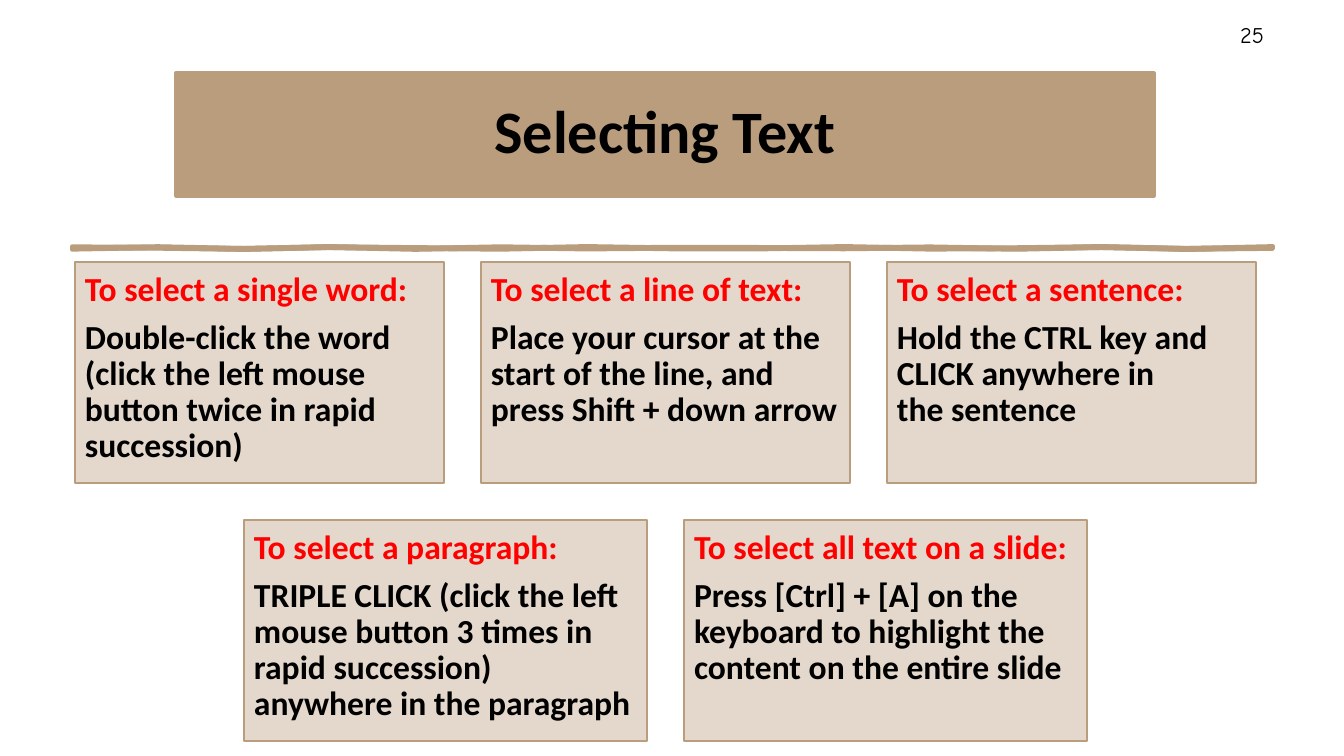
import math

import pptx
import pptx.dml.color
import pptx.enum.shapes
import pptx.enum.text
import pptx.util

# Content
NBSP = chr(160)  # keeps two words on one line
PAGE_NUMBER = "25"
TITLE = "Selecting Text"
CARD_ROWS = [
    {"card_width": 369, "top": 262, "cards": [
        ("To select a single word:",
         "Double-click the word (click the left mouse button twice in rapid succession)"),
        ("To select a line of text:",
         "Place your cursor at the start of the line, and press Shift + down arrow"),
        ("To select a sentence:",
         f"Hold the CTRL key and CLICK anywhere in the{NBSP}sentence"),
    ]},
    {"card_width": 403, "top": 520, "cards": [
        ("To select a paragraph:",
         "TRIPLE CLICK (click the left mouse button 3 times in rapid succession) "
         "anywhere in the paragraph"),
        ("To select all text on a slide:",
         "Press [Ctrl] + [A] on the keyboard to highlight the content on the entire slide"),
    ]},
]

# Theme
THEME = {
    "paper": "FFFFFF", "tan": "B99D7D", "card": "E3D8CB",
    "heading": "FF0000", "text": "000000",
    "font": "Calibri", "number_font": "Comic Neue",
    "title_size": 43, "card_size": 24, "number_size": 16,
    "line_spacing": 0.9, "card_space_after": 8.4, "number_space_after": 6,
}

# Layout in px
SLIDE_SIZE = (1344, 756)
TITLE_BOX = (176, 73, 978, 123)
NUMBER_BOX = (1073, 15, 201, 40)
CARD_HEIGHT, CARD_GAP, ROW_CENTRE, INSET = 221, 37, 665, 10
RULE_LEFT, RULE_RIGHT, RULE_Y, RULE_SEGMENTS = 72, 1273, 248, 14
RULE_STRANDS = [(190, 0), (245, 2)]  # wavelength, phase

EMU_PER_PX = 914400 / 100.8


def px(length):
    return pptx.util.Emu(round(length * EMU_PER_PX))


def colour(name):
    return pptx.dml.color.RGBColor.from_string(THEME[name])


def paint(shape, fill, line_width):
    shape.shadow.inherit = False
    shape.fill.solid()
    shape.fill.fore_color.rgb = colour(fill)
    if line_width:
        shape.line.color.rgb = colour("tan")
        shape.line.width = pptx.util.Pt(line_width)
    else:
        shape.line.fill.background()


def add_panel(slide, kind, box, fill, line_width):
    panel = slide.shapes.add_shape(kind, *map(px, box))
    paint(panel, fill, line_width)
    return panel


def set_frame(frame, anchor):
    frame.word_wrap = True
    frame.vertical_anchor = anchor
    frame.margin_left = frame.margin_right = px(INSET)
    frame.margin_top = frame.margin_bottom = px(INSET)


def write(paragraph, text, size, ink="text", font="font", bold=True,
          align=pptx.enum.text.PP_ALIGN.LEFT, space_after=0,
          line_spacing=THEME["line_spacing"]):
    paragraph.alignment = align
    paragraph.line_spacing = line_spacing
    paragraph.space_after = pptx.util.Pt(space_after)
    run = paragraph.add_run()
    run.text = text
    run.font.name = THEME[font]
    run.font.size = pptx.util.Pt(THEME[size])
    run.font.bold = bold
    run.font.color.rgb = colour(ink)


def add_title(slide):
    banner = add_panel(slide, pptx.enum.shapes.MSO_SHAPE.ROUNDED_RECTANGLE,
                       TITLE_BOX, "tan", 2.25)
    banner.adjustments[0] = 0
    set_frame(banner.text_frame, pptx.enum.text.MSO_ANCHOR.MIDDLE)
    write(banner.text_frame.paragraphs[0], TITLE, "title_size",
          align=pptx.enum.text.PP_ALIGN.CENTER)


def add_page_number(slide):
    number = slide.shapes.add_textbox(*map(px, NUMBER_BOX)).text_frame
    set_frame(number, pptx.enum.text.MSO_ANCHOR.MIDDLE)
    write(number.paragraphs[0], PAGE_NUMBER, "number_size", font="number_font",
          bold=False, align=pptx.enum.text.PP_ALIGN.RIGHT,
          space_after=THEME["number_space_after"], line_spacing=1.0)


def strand_outline(wavelength, phase):
    step = (RULE_RIGHT - RULE_LEFT) / RULE_SEGMENTS
    xs = [RULE_LEFT + index * step for index in range(RULE_SEGMENTS + 1)]
    upper = [(x, RULE_Y - 1 + math.sin(math.tau * x / wavelength + phase)) for x in xs]
    lower = [(x, y + 2) for x, y in reversed(upper)]
    return [(px(x), px(y)) for x, y in upper + lower]


def add_wavy_rule(slide):
    outlines = [strand_outline(*strand) for strand in RULE_STRANDS]
    first, *others = outlines
    builder = slide.shapes.build_freeform(*first[0])
    builder.add_line_segments(first[1:], close=True)
    for outline in others:
        builder.move_to(*outline[0])
        builder.add_line_segments(outline[1:], close=True)
    paint(builder.convert_to_shape(), "tan", 2.75)


def add_card(slide, box, heading, body):
    card = add_panel(slide, pptx.enum.shapes.MSO_SHAPE.RECTANGLE, box, "card", 1)
    frame = card.text_frame
    set_frame(frame, pptx.enum.text.MSO_ANCHOR.TOP)
    after = THEME["card_space_after"]
    write(frame.paragraphs[0], heading, "card_size", ink="heading", space_after=after)
    write(frame.add_paragraph(), body, "card_size", space_after=after)


def add_card_row(slide, row):
    pitch = row["card_width"] + CARD_GAP
    left = ROW_CENTRE - (len(row["cards"]) * pitch - CARD_GAP) // 2
    for column, (heading, body) in enumerate(row["cards"]):
        box = (left + column * pitch, row["top"], row["card_width"], CARD_HEIGHT)
        add_card(slide, box, heading, body)


def main():
    deck = pptx.Presentation()
    deck.slide_width, deck.slide_height = map(px, SLIDE_SIZE)
    slide = deck.slides.add_slide(deck.slide_layouts[6])
    # Backdrop, then header, then cards
    add_panel(slide, pptx.enum.shapes.MSO_SHAPE.RECTANGLE, (0, 0, *SLIDE_SIZE), "paper", 0)
    add_title(slide)
    add_page_number(slide)
    add_wavy_rule(slide)
    for row in CARD_ROWS:
        add_card_row(slide, row)
    deck.save("out.pptx")


if __name__ == "__main__":
    main()
